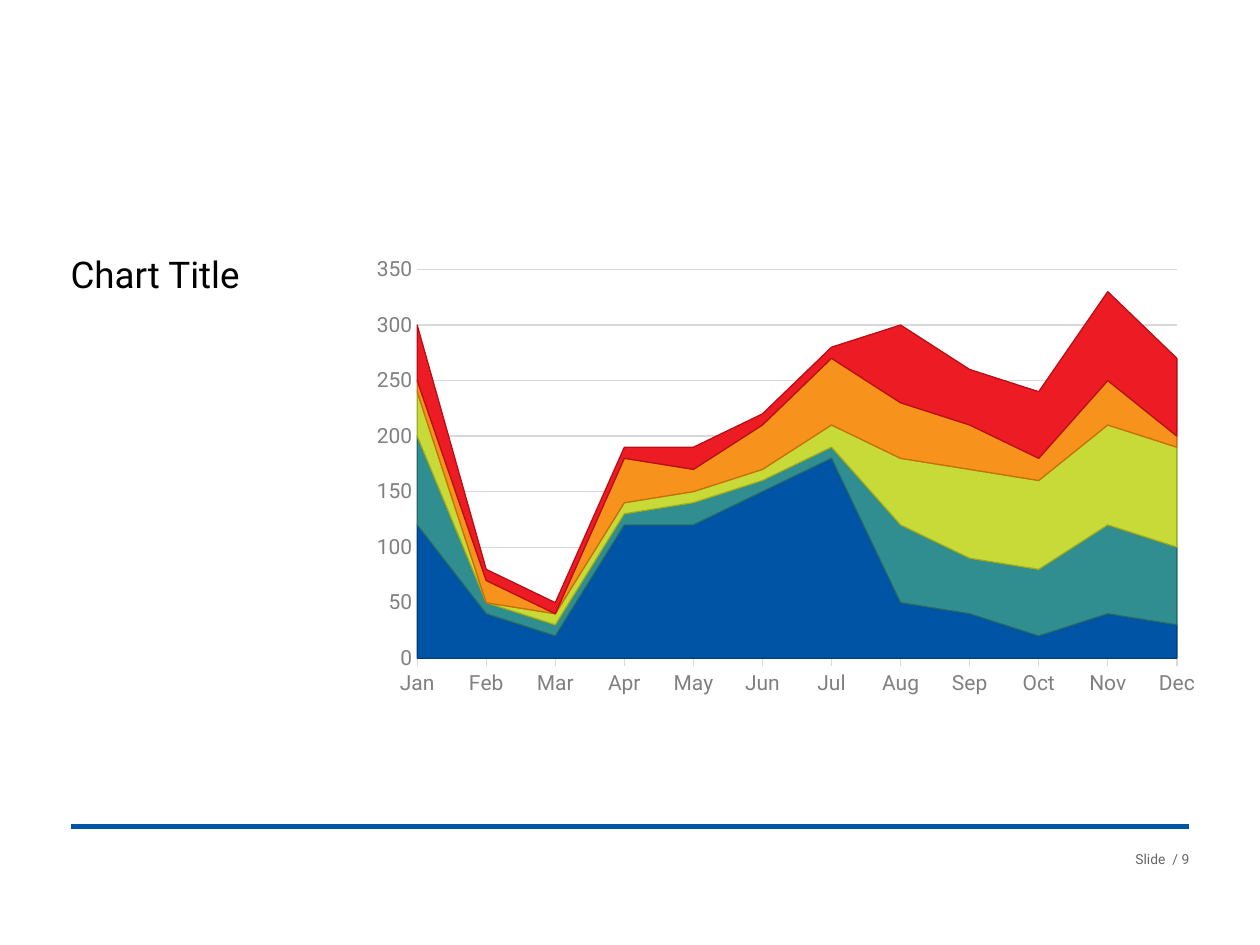
from lxml import etree
from pptx import Presentation
from pptx.chart.data import CategoryChartData
from pptx.dml.color import RGBColor
from pptx.enum.chart import XL_CHART_TYPE, XL_TICK_MARK
from pptx.enum.shapes import MSO_CONNECTOR
from pptx.enum.text import MSO_ANCHOR, MSO_AUTO_SIZE, PP_ALIGN
from pptx.oxml import parse_xml
from pptx.oxml.ns import nsdecls, qn
from pptx.util import Inches, Pt

AREA_STACKED = XL_CHART_TYPE.AREA_STACKED
TICK_NONE, TICK_OUTSIDE = XL_TICK_MARK.NONE, XL_TICK_MARK.OUTSIDE
STRAIGHT = MSO_CONNECTOR.STRAIGHT
TOP = MSO_ANCHOR.TOP
NO_AUTOFIT = MSO_AUTO_SIZE.NONE
LEFT, RIGHT = PP_ALIGN.LEFT, PP_ALIGN.RIGHT

FONT = "Roboto"
BLACK = RGBColor(0x00, 0x00, 0x00)
BLUE = RGBColor(0x00, 0x54, 0xA6)
FOOTER_GRAY = RGBColor(0x66, 0x66, 0x66)
LABEL_GRAY = RGBColor(0x80, 0x80, 0x80)
GRID_GRAY = RGBColor(0xD9, 0xD9, 0xD9)

SLIDE_WIDTH, SLIDE_HEIGHT = 10, 7.5
MARGIN = 0.56
CONTENT_WIDTH = SLIDE_WIDTH - 2 * MARGIN
CONTENT_TOP = 2.04

MONTHS = "Jan Feb Mar Apr May Jun Jul Aug Sep Oct Nov Dec".split()
# Monthly values, fill colour and outline colour of each layer, bottom to top
LAYERS = [
    ((120, 40, 20, 120, 120, 150, 180, 50, 40, 20, 40, 30),
     BLUE, RGBColor(0x00, 0x3F, 0x7D)),
    ((80, 10, 10, 10, 20, 10, 10, 70, 50, 60, 80, 70),
     RGBColor(0x30, 0x8E, 0x90), RGBColor(0x24, 0x6A, 0x6C)),
    ((40, 0, 10, 10, 10, 10, 20, 60, 80, 80, 90, 90),
     RGBColor(0xC7, 0xDA, 0x37), RGBColor(0x9C, 0xAD, 0x20)),
    ((10, 20, 0, 40, 20, 40, 60, 50, 40, 20, 40, 10),
     RGBColor(0xF7, 0x93, 0x1D), RGBColor(0xC8, 0x6F, 0x07)),
    ((50, 10, 10, 10, 20, 10, 10, 70, 50, 60, 80, 70),
     RGBColor(0xED, 0x1C, 0x24), RGBColor(0xB8, 0x0F, 0x15)),
]


def set_font(font, size, color):
    font.name = FONT
    font.size = Pt(size)
    font.color.rgb = color


def set_line(line, color, width=0.75):
    line.color.rgb = color
    line.width = Pt(width)


def fill_frame(frame, text, size, color, align, right=0, bottom=0):
    frame.margin_left = frame.margin_top = 0
    frame.margin_right, frame.margin_bottom = Inches(right), Inches(bottom)
    frame.word_wrap = True
    frame.auto_size = NO_AUTOFIT
    frame.vertical_anchor = TOP
    frame.text = text
    para = frame.paragraphs[0]
    para.alignment = align
    set_font(para.runs[0].font, size, color)
    return para


def add_title(page, left, top, width, height):
    title = page.shapes.title
    title.left, title.top = Inches(left), Inches(top)
    title.width, title.height = Inches(width), Inches(height)
    para = fill_frame(title.text_frame, "Chart Title", 21, BLACK, LEFT,
                      right=0.1, bottom=0.05)
    para.line_spacing = 0.9


def add_footer(page, left, top, width):
    """Draw the blue rule with the slide number below its right end."""
    rule = page.shapes.add_connector(
        STRAIGHT, Inches(left), Inches(top), Inches(left + width), Inches(top))
    set_line(rule.line, BLUE, 3)
    etree.SubElement(rule._element.spPr, qn("a:effectLst"))

    box_width = 1.03
    box = page.shapes.add_textbox(
        Inches(left + width - box_width), Inches(top + 0.19),
        Inches(box_width), Inches(0.13))
    fill_frame(box.text_frame, "Slide  / 9", 7.9, FOOTER_GRAY, RIGHT)


def set_plot_layout(chart, x, y, w, h):
    """Fix the inner plot area, in shares of the chart's size."""
    plot_area = chart._chartSpace.chart.plotArea
    for old in plot_area.findall(qn("c:layout")):
        plot_area.remove(old)
    shares = "".join(f'<c:{name} val="{value}"/>'
                     for name, value in zip("xywh", (x, y, w, h)))
    plot_area.insert(0, parse_xml(
        f'<c:layout {nsdecls("c")}><c:manualLayout>'
        '<c:layoutTarget val="inner"/><c:xMode val="edge"/><c:yMode val="edge"/>'
        f'{shares}</c:manualLayout></c:layout>'))


def format_axes(chart):
    months, values = chart.category_axis, chart.value_axis
    for axis in (months, values):
        set_font(axis.tick_labels.font, 12, LABEL_GRAY)
        axis.minor_tick_mark = TICK_NONE
    months.major_tick_mark = TICK_OUTSIDE
    months.has_major_gridlines = False
    set_line(months.format.line, GRID_GRAY)

    values.major_tick_mark = TICK_NONE
    values.minimum_scale, values.maximum_scale = 0, 350
    values.major_unit = 50
    values.has_major_gridlines = True
    set_line(values.major_gridlines.format.line, GRID_GRAY)
    values.format.line.fill.background()
    # Start the areas on the value axis itself
    values._element.find(qn("c:crossBetween")).set("val", "midCat")


def add_area_chart(page, left, top, width, height):
    data = CategoryChartData()
    data.categories = MONTHS
    for number, (values, _, _) in enumerate(LAYERS, 1):
        data.add_series(f"Series {number}", values)
    chart = page.shapes.add_chart(
        AREA_STACKED, Inches(left), Inches(top), Inches(width), Inches(height),
        data).chart
    chart.has_title = chart.has_legend = False
    set_font(chart.font, 10, BLACK)
    chart.plots[0].vary_by_categories = False
    for series, (_, fill, outline) in zip(chart.plots[0].series, LAYERS):
        series.format.fill.solid()
        series.format.fill.fore_color.rgb = fill
        set_line(series.format.line, outline)
    format_axes(chart)
    set_plot_layout(chart, 0.057, 0.023, 0.879, 0.842)


def main():
    deck = Presentation()
    deck.slide_width, deck.slide_height = Inches(SLIDE_WIDTH), Inches(SLIDE_HEIGHT)
    page = deck.slides.add_slide(deck.slide_layouts.get_by_name("Title Only"))
    add_footer(page, MARGIN, 6.56, CONTENT_WIDTH)
    add_area_chart(page, 2.92, CONTENT_TOP, 6.86, 3.68)
    add_title(page, MARGIN, CONTENT_TOP, 2.15, 2.1)
    deck.save("out.pptx")


if __name__ == "__main__":
    main()
